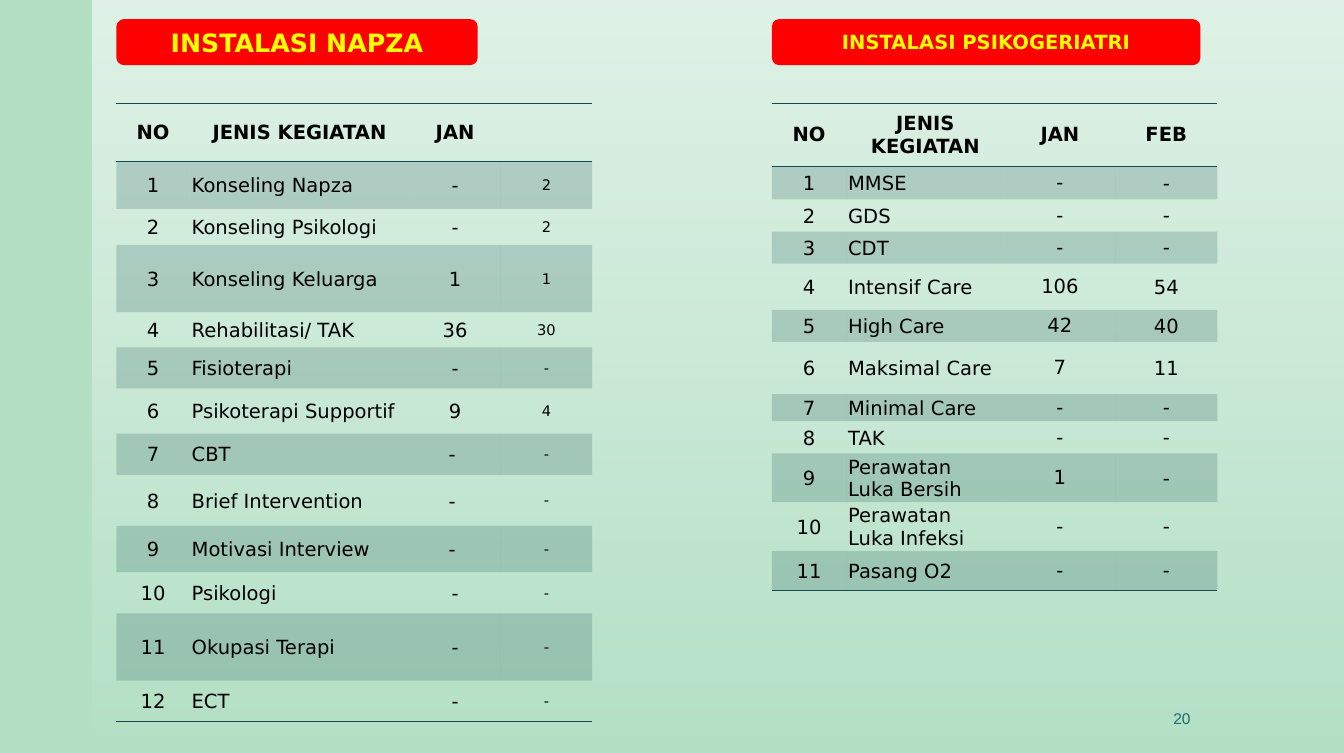
from lxml import etree
from pptx import Presentation
from pptx.dml.color import RGBColor
from pptx.enum.shapes import MSO_SHAPE
from pptx.enum.text import MSO_ANCHOR, PP_ALIGN
from pptx.oxml.ns import qn
from pptx.util import Inches, Pt

RECT, PILL = MSO_SHAPE.RECTANGLE, MSO_SHAPE.ROUNDED_RECTANGLE
LEFT, MID, RIGHT = PP_ALIGN.LEFT, PP_ALIGN.CENTER, PP_ALIGN.RIGHT
CENTER = MSO_ANCHOR.MIDDLE
FONT = "DejaVu Sans"
MINT, TEAL, RED, YELLOW = "B3E0C5", "164B4F", "FF0000", "FFFF00"

NAPZA = [
    ("NO", "JENIS KEGIATAN", "JAN", ""),
    ("1", "Konseling Napza", "-", "2"),
    ("2", "Konseling Psikologi", "-", "2"),
    ("3", "Konseling Keluarga", "1", "1"),
    ("4", "Rehabilitasi/ TAK", "36", "30"),
    ("5", "Fisioterapi", "-", "-"),
    ("6", "Psikoterapi Supportif", "9", "4"),
    ("7", "CBT", "- ", "-"),
    ("8", "Brief Intervention", "- ", "-"),
    ("9", "Motivasi Interview", "- ", "-"),
    ("10", "Psikologi", "-", "-"),
    ("11", "Okupasi Terapi", "-", "-"),
    ("12", "ECT", "-", "-"),
]
PSIKO = [
    ("NO", "JENIS KEGIATAN", "JAN", "FEB"),
    ("1", "MMSE", "-", "-"),
    ("2", "GDS", "-", "-"),
    ("3", "CDT", "-", "-"),
    ("4", "Intensif Care", "106", "54"),
    ("5", "High Care", "42", "40"),
    ("6", "Maksimal Care", "7", "11"),
    ("7", "Minimal Care", "-", "-"),
    ("8", "TAK", "-", "-"),
    ("9", "Perawatan Luka Bersih", "1", "-"),
    ("10", "Perawatan Luka Infeksi", "-", "-"),
    ("11", "Pasang O2", "-", "-"),
]


def color(code):
    return RGBColor.from_string(code)


def write(frame, text, size=14, bold=False, ink="000000", align=MID, font=FONT):
    para = frame.paragraphs[0]
    para.alignment = align
    run = para.add_run()
    run.text = text
    run.font.size, run.font.bold, run.font.name = Pt(size), bold, font
    run.font.color.rgb = color(ink)


def fade(node, alpha):
    """Set the opacity, in percent, of the colour inside a fill."""
    tint = next(node.iter(qn("a:srgbClr")))
    etree.SubElement(tint, qn("a:alpha"), val=str(alpha * 1000))


def border(cell, lined):
    """Draw a line on the sides in lined and clear the others."""
    props = cell._tc.get_or_add_tcPr()
    for spot, side in enumerate("LRTB"):
        line = etree.Element(qn("a:ln" + side), w=str(Pt(1)))
        if side in lined:
            fill = etree.SubElement(line, qn("a:solidFill"))
            etree.SubElement(fill, qn("a:srgbClr"), val=TEAL)
        else:
            etree.SubElement(line, qn("a:noFill"))
        props.insert(spot, line)


def add_box(slide, kind, x, y, w, h):
    box = slide.shapes.add_shape(kind, Inches(x), Inches(y), Inches(w), Inches(h))
    box.shadow.inherit = False
    box.line.fill.background()
    return box


def add_veil(slide, x, y, w, h):
    veil = add_box(slide, RECT, x, y, w, h)
    veil.fill.gradient()
    veil.fill.gradient_angle = 270
    for stop, alpha in zip(veil.fill.gradient_stops, (60, 0)):
        stop.color.rgb = color("FFFFFF")
        fade(stop._gs, alpha)


def add_grid(slide, x, y, data, cols, rows, pads, last):
    grid = slide.shapes.add_table(
        len(rows), len(cols), Inches(x), Inches(y),
        Inches(sum(cols)), Inches(sum(rows))).table
    grid.first_row = grid.horz_banding = False
    for col, width in zip(grid.columns, cols):
        col.width = Inches(width)
    for r, (row, height) in enumerate(zip(data, rows)):
        grid.rows[r].height = Inches(height)
        lined = {0: "TB", 1: "T", len(rows) - 1: "B"}.get(r, "")
        for c, text in enumerate(row):
            cell = grid.cell(r, c)
            cell.vertical_anchor = CENTER
            side, top, base = (pads[c], pads[c], 0) if r else (0.2, 0.08, 0.08)
            cell.margin_left = cell.margin_right = Inches(side)
            cell.margin_top, cell.margin_bottom = Inches(top), Inches(base)
            if text:
                write(cell.text_frame, text, bold=r == 0,
                      size=last if r and c == 3 else 14,
                      align=LEFT if r and c == 1 else MID)
            # Odd rows are tinted
            if r % 2:
                cell.fill.solid()
                cell.fill.fore_color.rgb = color(TEAL)
                fade(cell._tc.tcPr, 20)
            else:
                cell.fill.background()
            border(cell, lined)


def add_unit(slide, x, y, name, width, size, **grid):
    """A red heading with its table of activities below."""
    head = add_box(slide, PILL, x, y, width, 0.46)
    head.fill.solid()
    head.fill.fore_color.rgb = color(RED)
    head.text_frame.word_wrap = True
    head.text_frame.vertical_anchor = CENTER
    write(head.text_frame, name, size=size, bold=True, ink=YELLOW)
    add_grid(slide, x, y + 0.84, **grid)


def add_page(slide, x, y, w, h):
    box = slide.shapes.add_textbox(Inches(x), Inches(y), Inches(w), Inches(h))
    box.text_frame.word_wrap = True
    box.text_frame.vertical_anchor = CENTER
    write(box.text_frame, "20", size=11.1, ink="1F696F", align=RIGHT, font="Arial")


def main():
    deck = Presentation()
    deck.slide_width, deck.slide_height = Inches(13.39), Inches(7.5)
    slide = deck.slides.add_slide(deck.slide_layouts[6])

    # Backdrop
    slide.background.fill.solid()
    slide.background.fill.fore_color.rgb = color(MINT)
    add_veil(slide, 0.92, 0, 12.47, 7.5)
    add_page(slide, 8.84, 6.95, 3.12, 0.4)

    # Left unit
    add_unit(slide, 1.16, 0.19, "INSTALASI NAPZA", 3.6, 18.1, data=NAPZA,
             cols=[0.73, 2.19, 0.91, 0.91],
             rows=[0.58, 0.47, 0.36, 0.67, 0.35, 0.41, 0.45,
                   0.41, 0.51, 0.46, 0.41, 0.67, 0.41],
             pads=[0.02, 0.02, 0.02, 0.01], last=10.5)

    # Right unit
    add_unit(slide, 7.69, 0.19, "INSTALASI PSIKOGERIATRI", 4.27, 14, data=PSIKO,
             cols=[0.74, 1.58, 1.1, 1.02],
             rows=[0.61, 0.33, 0.32, 0.32, 0.46, 0.32,
                   0.52, 0.27, 0.32, 0.47, 0.47, 0.39],
             pads=[0.02, 0.02, 0, 0.01], last=14)

    deck.save("out.pptx")


if __name__ == "__main__":
    main()
